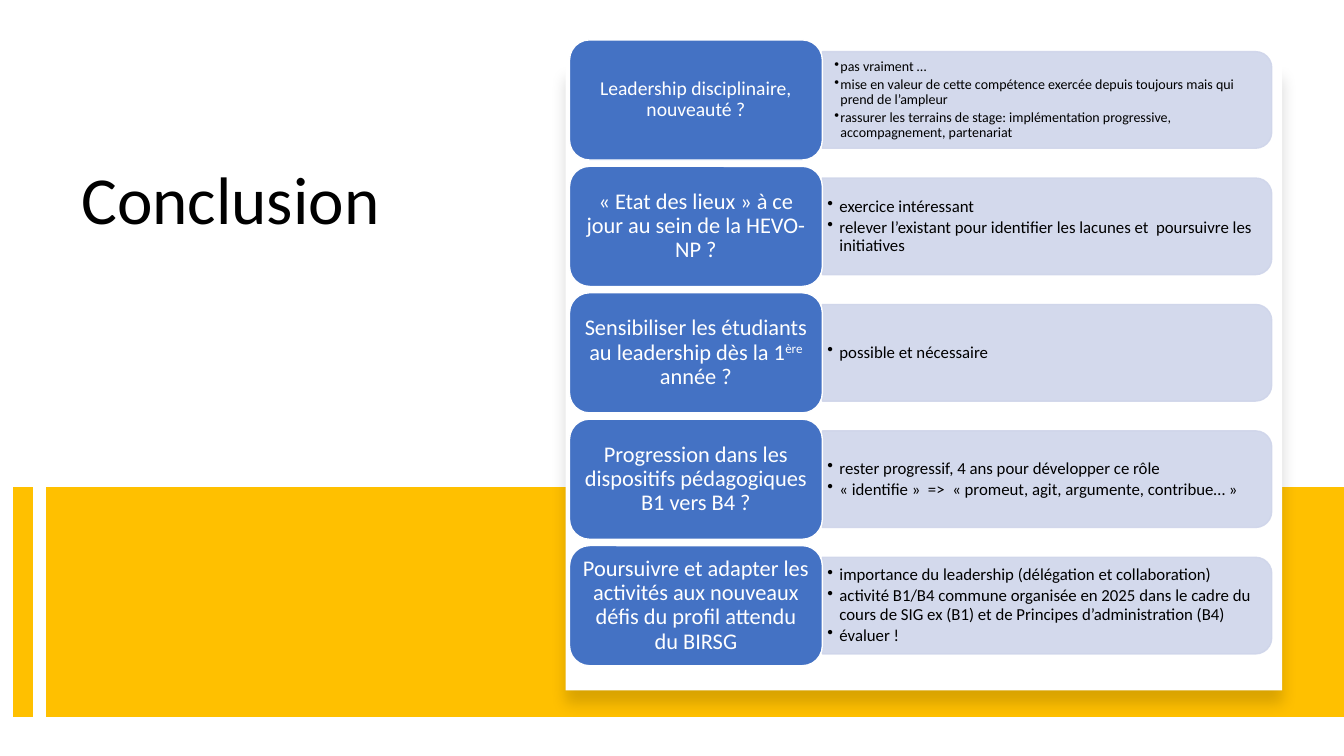
from dataclasses import dataclass

from lxml import etree
from pptx import Presentation
from pptx import util as u
from pptx.dml.color import RGBColor
from pptx.enum import shapes, text
from pptx.oxml import ns


@dataclass(frozen=True)
class Theme:
    font: str = "Calibri"
    ink: str = "000000"
    paper: str = "FFFFFF"
    accent: str = "FFC000"
    label: str = "4472C4"
    detail: str = "CFD5EA"
    title_size: int = 48
    label_size: int = 16
    detail_size: int = 12


@dataclass(frozen=True)
class Box:
    """Area in grid columns and rows."""
    left: float
    top: float
    width: float
    height: float


@dataclass(frozen=True)
class Topic:
    label: str  # text between ^ marks is superscript
    details: tuple[str, ...]
    label_size: int = Theme.label_size
    detail_size: int = Theme.detail_size
    inset: float = 0.05
    indent: float = 0.12


THEME = Theme()

# The slide is a grid of 160 columns by 90 rows, 12 to the inch
COLS, ROWS, PER_INCH = 160, 90, 12
TITLE = Box(8.5, 19.2, 49.8, 35.3)
BAND = Box(5.5, 58, 154.5, 27.35)
BAR_COL = 2.75
PANEL = Box(67.35, 7.7, 85.3, 74.5)
FIRST_CENTRE, PITCH = 11.9, 15.05
LABEL_LEFT, LABEL_WIDTH, LABEL_HEIGHT = 67.8, 30.1, 14.3
DETAIL_LEFT, DETAIL_WIDTH, DETAIL_HEIGHT = 97.9, 53.5, 11.5

TOPICS = (
    Topic("Leadership disciplinaire, nouveauté ?",
          ("pas vraiment …",
           "mise en valeur de cette compétence exercée depuis toujours mais qui prend de l’ampleur",
           "rassurer les terrains de stage: implémentation progressive,  accompagnement, partenariat"),
          label_size=14, detail_size=10, inset=0.12, indent=0.06),
    Topic("« Etat des lieux » à ce jour au sein de la HEVO-NP ?",
          ("exercice intéressant",
           "relever l’existant pour identifier les lacunes et  poursuivre les initiatives")),
    Topic("Sensibiliser les étudiants au leadership dès la 1^ère^ année ?",
          ("possible et nécessaire",)),
    Topic("Progression dans les dispositifs pédagogiques B1 vers B4 ?",
          ("rester progressif, 4 ans pour développer ce rôle",
           "« identifie »  =>  « promeut, agit, argumente, contribue… »")),
    Topic("Poursuivre et adapter les activités aux nouveaux défis du profil attendu du BIRSG",
          ("importance du leadership (délégation et collaboration)",
           "activité B1/B4 commune organisée en 2025 dans le cadre du cours de SIG ex (B1) "
           "et de Principes d’administration (B4)",
           "évaluer !")),
)


def grid(n: float) -> int:
    return u.Inches(n / PER_INCH)


def place(box: Box) -> tuple[int, int, int, int]:
    return grid(box.left), grid(box.top), grid(box.width), grid(box.height)


def child(parent, tag: str, **attrs):
    return etree.SubElement(parent, ns.qn(tag), attrs)


def add_block(s, kind, box: Box, fill: str, line: str | None = None):
    sp = s.shapes.add_shape(kind, *place(box))
    sp.shadow.inherit = False
    sp.fill.solid()
    sp.fill.fore_color.rgb = RGBColor.from_string(fill)
    if line:
        sp.line.color.rgb = RGBColor.from_string(line)
        sp.line.width = u.Pt(1)
    else:
        sp.line.fill.background()
    return sp


def set_frame(tf, anchor, across: float, down: float) -> None:
    tf.word_wrap = True
    tf.auto_size = text.MSO_AUTO_SIZE.NONE
    tf.vertical_anchor = anchor
    tf.margin_left = tf.margin_right = u.Inches(across)
    tf.margin_top = tf.margin_bottom = u.Inches(down)


def format_paragraph(p, size: int, color: str, align=text.PP_ALIGN.LEFT) -> None:
    p.alignment = align
    p.line_spacing = 0.9
    p.font.name = THEME.font
    p.font.size = u.Pt(size)
    p.font.color.rgb = RGBColor.from_string(color)


def add_bullet(p, indent: float) -> None:
    pPr = p._p.get_or_add_pPr()
    pPr.set("marL", str(u.Inches(indent)))
    pPr.set("indent", str(-u.Inches(indent)))
    bullet = etree.Element(ns.qn("a:buChar"), char="•")
    pPr.find(ns.qn("a:defRPr")).addprevious(bullet)


def add_panel(s) -> None:
    sp = add_block(s, shapes.MSO_SHAPE.RECTANGLE, PANEL, THEME.paper)
    effects = sp._element.spPr.find(ns.qn("a:effectLst"))
    shadow = child(effects, "a:outerShdw", blurRad=str(u.Pt(11)), dist=str(u.Pt(10)),
                   dir="5400000", algn="t", rotWithShape="0")
    color = child(shadow, "a:srgbClr", val=THEME.ink)
    child(color, "a:alpha", val="15000")


def add_detail(s, topic: Topic, centre: float) -> None:
    # A tall shape turned a quarter so that its round corners face right
    upright = Box(DETAIL_LEFT + (DETAIL_WIDTH - DETAIL_HEIGHT) / 2,
                  centre - DETAIL_WIDTH / 2, DETAIL_HEIGHT, DETAIL_WIDTH)
    sp = add_block(s, shapes.MSO_SHAPE.ROUND_2_SAME_RECTANGLE, upright,
                   THEME.detail, THEME.detail)
    sp.rotation = 90
    for color in sp._element.spPr.iter(ns.qn("a:srgbClr")):
        child(color, "a:alpha", val="90000")

    height = DETAIL_HEIGHT - 1.2
    area = Box(DETAIL_LEFT, centre - height / 2, DETAIL_WIDTH - 0.5, height)
    tf = s.shapes.add_textbox(*place(area)).text_frame
    set_frame(tf, text.MSO_ANCHOR.MIDDLE, topic.inset, 0.03)
    tf.text = "\n".join(topic.details)
    for p in tf.paragraphs:
        format_paragraph(p, topic.detail_size, THEME.ink)
        p.space_after = u.Pt(topic.detail_size * 0.18)
        add_bullet(p, topic.indent)


def add_label(s, topic: Topic, centre: float) -> None:
    box = Box(LABEL_LEFT, centre - LABEL_HEIGHT / 2, LABEL_WIDTH, LABEL_HEIGHT)
    sp = add_block(s, shapes.MSO_SHAPE.ROUNDED_RECTANGLE, box, THEME.label, THEME.paper)
    # The rounded corners already inset the text by about 0.06 inch
    set_frame(sp.text_frame, text.MSO_ANCHOR.MIDDLE, 0.07, 0.03)
    p = sp.text_frame.paragraphs[0]
    format_paragraph(p, topic.label_size, THEME.paper, text.PP_ALIGN.CENTER)
    for i, part in enumerate(topic.label.split("^")):
        r = p.add_run()
        r.text = part
        if i % 2:
            r._r.get_or_add_rPr().set("baseline", "30000")


def main() -> None:
    prs = Presentation()
    prs.slide_width, prs.slide_height = grid(COLS), grid(ROWS)
    s = prs.slides.add_slide(prs.slide_layouts[5])

    # Title
    title = s.shapes.title
    title.left, title.top, title.width, title.height = place(TITLE)
    set_frame(title.text_frame, text.MSO_ANCHOR.TOP, 0.1, 0.05)
    title.text_frame.text = "Conclusion"
    format_paragraph(title.text_frame.paragraphs[0], THEME.title_size, THEME.ink)

    # Yellow band and bar
    add_block(s, shapes.MSO_SHAPE.RECTANGLE, BAND, THEME.accent)
    bar = s.shapes.add_connector(shapes.MSO_CONNECTOR.STRAIGHT, grid(BAR_COL), grid(BAND.top),
                                 grid(BAR_COL), grid(BAND.top + BAND.height))
    bar.line.color.rgb = RGBColor.from_string(THEME.accent)
    bar.line.width = u.Pt(14)
    child(bar._element.spPr, "a:effectLst")

    # White panel with its topics
    add_panel(s)
    for row, topic in enumerate(TOPICS):
        centre = FIRST_CENTRE + row * PITCH
        add_detail(s, topic, centre)
        add_label(s, topic, centre)

    prs.save("out.pptx")


if __name__ == "__main__":
    main()
